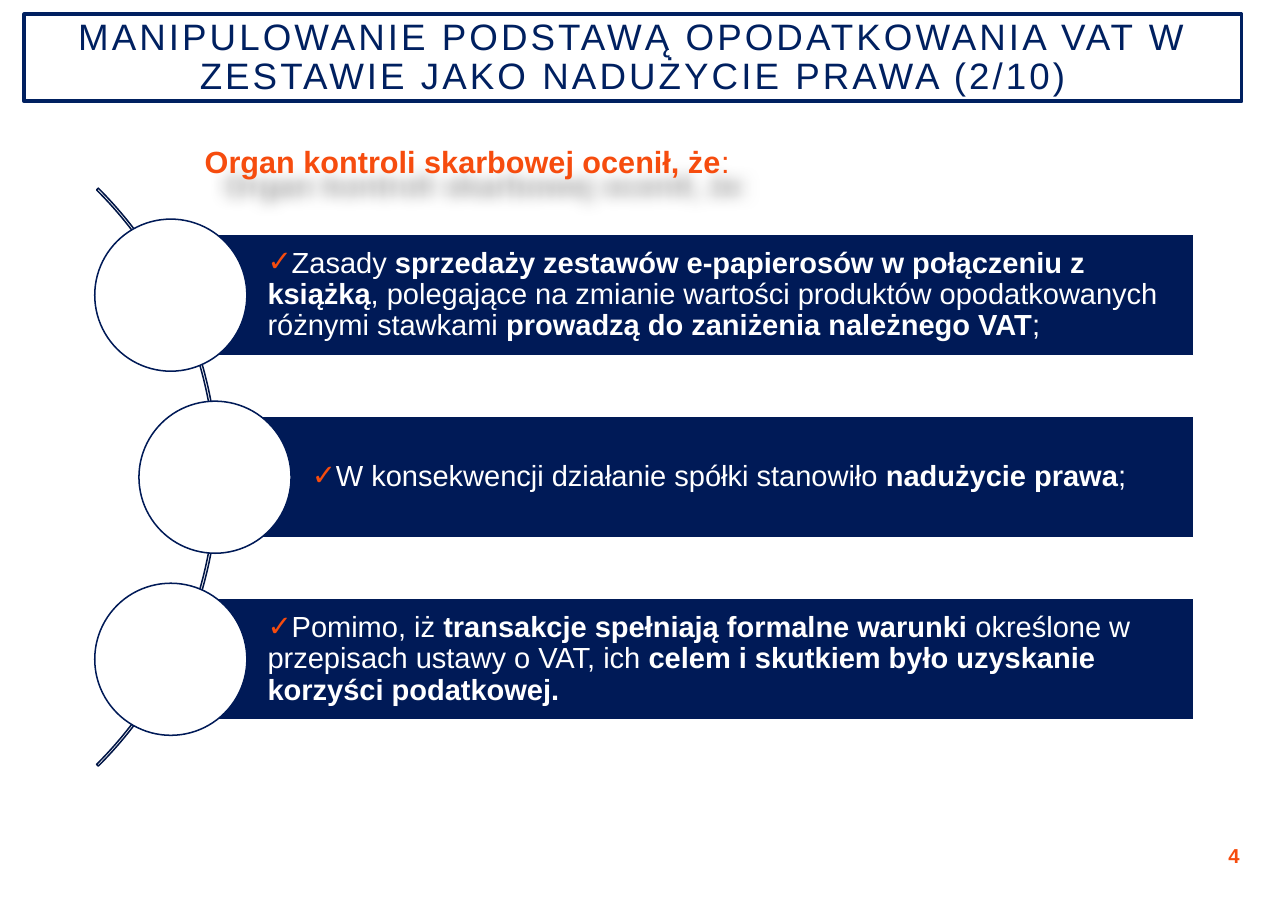
"""Builds the slide on VAT base manipulation as an abuse of law."""
from dataclasses import dataclass

from lxml import etree
from pptx import Presentation
from pptx.dml.color import RGBColor
from pptx.enum.shapes import MSO_SHAPE
from pptx.enum.text import MSO_ANCHOR, MSO_AUTO_SIZE, PP_ALIGN
from pptx.oxml.ns import qn
from pptx.util import Pt

RECTANGLE, OVAL, BLOCK_ARC = MSO_SHAPE.RECTANGLE, MSO_SHAPE.OVAL, MSO_SHAPE.BLOCK_ARC
MIDDLE, NO_FIT = MSO_ANCHOR.MIDDLE, MSO_AUTO_SIZE.NONE
LEFT, CENTER, RIGHT, JUSTIFY = PP_ALIGN.LEFT, PP_ALIGN.CENTER, PP_ALIGN.RIGHT, PP_ALIGN.JUSTIFY

TITLE = "MANIPULOWANIE PODSTAWĄ OPODATKOWANIA VAT W ZESTAWIE JAKO NADUŻYCIE PRAWA (2/10)"
HEADING = [("Organ kontroli skarbowej ocenił, że", True), (":", False)]
FINDINGS = [
    [
        ("Zasady ", False),
        ("sprzedaży zestawów e-papierosów w połączeniu z książką", True),
        (", polegające na zmianie wartości produktów opodatkowanych różnymi stawkami ", False),
        ("prowadzą do zaniżenia należnego VAT", True),
        (";", False),
    ],
    [
        ("W konsekwencji działanie spółki stanowiło ", False),
        ("nadużycie prawa", True),
        (";", False),
    ],
    [
        ("Pomimo, iż ", False),
        ("transakcje spełniają formalne warunki ", True),
        ("określone w przepisach ustawy o VAT, ich ", False),
        ("celem i skutkiem było uzyskanie korzyści podatkowej.", True),
    ],
]
PAGE_NUMBER = [("4", True)]


@dataclass(frozen=True)
class Theme:
    """Colours, font and type sizes of the slide."""
    font: str = "Arial"
    navy: RGBColor = RGBColor(0x00, 0x1A, 0x57)
    arc: RGBColor = RGBColor(0x00, 0x15, 0x46)
    title: RGBColor = RGBColor(0x00, 0x20, 0x60)
    accent: RGBColor = RGBColor(0xF6, 0x4C, 0x0E)
    white: RGBColor = RGBColor(0xFF, 0xFF, 0xFF)
    title_size: float = 24
    heading_size: float = 20
    body_size: float = 19
    number_size: float = 13.2


THEME = Theme()
SLIDE_WIDTH, SLIDE_HEIGHT = 841.68, 595.44
MIDDLE_Y, ROW_PITCH = 311.9, 119
BAR_RIGHT, BAR_HEIGHT, CIRCLE = 779.8, 79.2, 99.4
OUTER_X, INNER_X = 111.6, 140.5
ARC_LEFT, ARC_SIZE = -391.7, 534.2


def style_font(paragraph, size, color, align):
    """Set the font and alignment shared by all runs of a paragraph."""
    paragraph.alignment = align
    font = paragraph.font
    font.name, font.size = THEME.font, Pt(size)
    font.color.rgb = color


def add_spans(paragraph, spans):
    """Add runs given as pairs of text and bold flag."""
    for text, bold in spans:
        span = paragraph.add_run()
        span.text = text
        span.font.bold = bold


def add_check_bullet(paragraph):
    """Give a paragraph an accent-coloured check mark as its bullet."""
    properties = paragraph._p.get_or_add_pPr()
    properties.set("marL", "0")
    properties.set("indent", "0")
    color = etree.SubElement(properties, qn("a:buClr"))
    etree.SubElement(color, qn("a:srgbClr"), val=str(THEME.accent))
    etree.SubElement(properties, qn("a:buFont"), typeface=THEME.font)
    etree.SubElement(properties, qn("a:buChar"), char="✓")


def add_soft_shadow(box):
    """Give a text box a blurred shadow below and to the right."""
    effects = etree.SubElement(box._element.spPr, qn("a:effectLst"))
    shadow = etree.SubElement(
        effects, qn("a:outerShdw"), blurRad=str(Pt(10)), dist=str(Pt(19)),
        dir="3000000", algn="tl", rotWithShape="0")
    color = etree.SubElement(shadow, qn("a:srgbClr"), val="000000")
    etree.SubElement(color, qn("a:alpha"), val="40000")


def set_frame(frame, left, other):
    """Set wrapping, middle anchoring and insets of a text frame."""
    frame.word_wrap, frame.auto_size = True, NO_FIT
    frame.vertical_anchor = MIDDLE
    frame.margin_left = Pt(left)
    frame.margin_right = frame.margin_top = frame.margin_bottom = Pt(other)


def add_figure(slide, kind, bounds, fill, line):
    """Add a preset shape; a fill of None leaves it empty."""
    shape = slide.shapes.add_shape(kind, *map(Pt, bounds))
    shape.shadow.inherit = False
    if fill is None:
        shape.fill.background()
    else:
        shape.fill.solid()
        shape.fill.fore_color.rgb = fill
    shape.line.color.rgb = line
    shape.line.width = Pt(1)
    return shape


def add_label(slide, bounds, spans, size, align):
    """Add an accent-coloured line of text."""
    box = slide.shapes.add_textbox(*map(Pt, bounds))
    set_frame(box.text_frame, 7.2, 3.6)
    paragraph = box.text_frame.paragraphs[0]
    style_font(paragraph, size, THEME.accent, align)
    add_spans(paragraph, spans)
    return box


def fill_title(slide):
    """Place and format the framed title."""
    title = slide.shapes.title
    title.left, title.top, title.width, title.height = map(Pt, (15.8, 9.4, 795.6, 56.9))
    title.fill.solid()
    title.fill.fore_color.rgb = THEME.white
    title.line.color.rgb = THEME.title
    title.line.width = Pt(2.5)
    set_frame(title.text_frame, 14.4, 14.4)
    paragraph = title.text_frame.paragraphs[0]
    paragraph.text = TITLE
    paragraph.line_spacing = 0.9
    style_font(paragraph, THEME.title_size, THEME.title, CENTER)
    paragraph._p.pPr.find(qn("a:defRPr")).set("spc", "200")


def add_finding(slide, index, spans):
    """Add one bar of text with the circle at its left end."""
    offset = index - (len(FINDINGS) - 1) / 2
    center_x = OUTER_X if offset else INNER_X
    center_y = MIDDLE_Y + offset * ROW_PITCH
    bounds = (center_x, center_y - BAR_HEIGHT / 2, BAR_RIGHT - center_x, BAR_HEIGHT)
    bar = add_figure(slide, RECTANGLE, bounds, THEME.navy, THEME.white)
    set_frame(bar.text_frame, 63.2, 3.6)
    paragraph = bar.text_frame.paragraphs[0]
    add_check_bullet(paragraph)
    paragraph.line_spacing = 0.9
    style_font(paragraph, THEME.body_size, THEME.white, LEFT)
    add_spans(paragraph, spans)
    bounds = (center_x - CIRCLE / 2, center_y - CIRCLE / 2, CIRCLE, CIRCLE)
    add_figure(slide, OVAL, bounds, THEME.white, THEME.navy)


def main():
    """Build and save the deck."""
    deck = Presentation()
    deck.slide_width, deck.slide_height = Pt(SLIDE_WIDTH), Pt(SLIDE_HEIGHT)
    page = deck.slides.add_slide(deck.slide_layouts[5])
    fill_title(page)
    bounds = (ARC_LEFT, MIDDLE_Y - ARC_SIZE / 2, ARC_SIZE, ARC_SIZE)
    arc = add_figure(page, BLOCK_ARC, bounds, None, THEME.arc)
    for position, value in enumerate((189, 27, 0.003)):
        arc.adjustments[position] = value
    for index, spans in enumerate(FINDINGS):
        add_finding(page, index, spans)
    heading = add_label(page, (126.7, 79.2, 368.6, 51.8), HEADING, THEME.heading_size, JUSTIFY)
    add_soft_shadow(heading)
    add_label(page, (769.7, 543.6, 43.9, 31.7), PAGE_NUMBER, THEME.number_size, RIGHT)
    deck.save("out.pptx")


if __name__ == "__main__":
    main()
